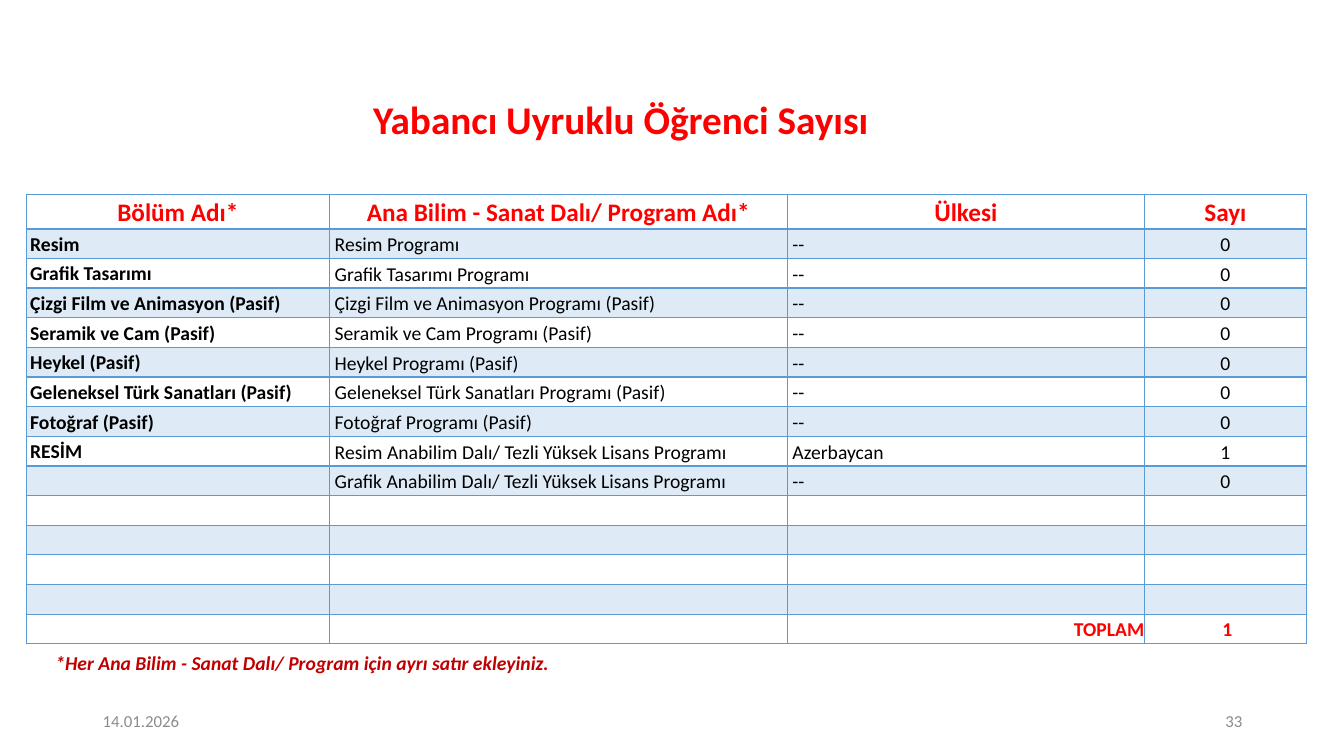
from dataclasses import dataclass

from lxml import etree
from pptx import Presentation
from pptx import util as u
from pptx.dml.color import RGBColor
from pptx.enum import text as t
from pptx.oxml import ns


@dataclass(frozen=True)
class Theme:
    """Colours, font and type sizes of the slide."""
    font: str = "Calibri"
    red: str = "FF0000"
    dark_red: str = "C00000"
    black: str = "000000"
    grey: str = "8C8C8C"
    blue: str = "5B9BD5"
    band_opacity: int = 20
    title: int = 28
    header: int = 18
    body: int = 14
    footer: int = 12


THEME = Theme()
LEFT, CENTER, RIGHT = t.PP_ALIGN.LEFT, t.PP_ALIGN.CENTER, t.PP_ALIGN.RIGHT

COLUMN_WIDTHS = (3.01, 4.54, 3.54, 1.61)
HEADER_HEIGHT = 0.34
HEADINGS = ("Bölüm Adı*", "Ana Bilim - Sanat Dalı/ Program Adı*", "Ülkesi", "Sayı")
STUDENTS = (
    ("Resim", "Resim Programı", "--", "0"),
    ("Grafik Tasarımı", "Grafik Tasarımı Programı", "--", "0"),
    ("Çizgi Film ve Animasyon (Pasif)", "Çizgi Film ve Animasyon Programı (Pasif)", "--", "0"),
    ("Seramik ve Cam (Pasif)", "Seramik ve Cam Programı (Pasif)", "--", "0"),
    ("Heykel (Pasif)", "Heykel Programı (Pasif)", "--", "0"),
    ("Geleneksel Türk Sanatları (Pasif)", "Geleneksel Türk Sanatları Programı (Pasif)", "--", "0"),
    ("Fotoğraf (Pasif)", "Fotoğraf Programı (Pasif)", "--", "0"),
    ("RESİM", "Resim Anabilim Dalı/ Tezli Yüksek Lisans Programı", "Azerbaycan", "1"),
    ("", "Grafik Anabilim Dalı/ Tezli Yüksek Lisans Programı", "--", "0"),
)
EMPTY_ROWS = 4
TOTAL = ("", "", "TOPLAM", "1")


def write_text(frame, words, size=THEME.body, color=THEME.black, bold=False,
               italic=False, align=LEFT, spacing=None):
    """Write one formatted paragraph into a text frame."""
    paragraph = frame.paragraphs[0]
    paragraph.alignment = align
    paragraph.line_spacing = spacing
    if not words:
        end = etree.SubElement(paragraph._p, ns.qn("a:endParaRPr"))
        end.set("sz", str(size * 100))
        return
    run = paragraph.add_run()
    run.text = words
    run.font.name = THEME.font
    run.font.size = u.Pt(size)
    run.font.bold = bold
    run.font.italic = italic
    run.font.color.rgb = RGBColor.from_string(color)


def add_text(slide, box, words, anchor=t.MSO_ANCHOR.MIDDLE, **style):
    """Place a wrapped text box in the given box."""
    frame = slide.shapes.add_textbox(*map(u.Inches, box)).text_frame
    frame.word_wrap = True
    frame.vertical_anchor = anchor
    write_text(frame, words, **style)


def set_borders(cell, **widths):
    """Draw the four cell borders with the given point widths."""
    properties = cell._tc.get_or_add_tcPr()
    for side in "LRTB":
        line = etree.SubElement(properties, ns.qn(f"a:ln{side}"))
        line.set("w", str(u.Pt(widths.get(side, 1))))
        fill = etree.SubElement(line, ns.qn("a:solidFill"))
        etree.SubElement(fill, ns.qn("a:srgbClr")).set("val", THEME.blue)


def set_band(cell, banded):
    """Give the cell a translucent band or no fill."""
    if not banded:
        cell.fill.background()
        return
    cell.fill.solid()
    cell.fill.fore_color.rgb = RGBColor.from_string(THEME.blue)
    color = cell._tc.tcPr.find(".//" + ns.qn("a:solidFill") + "[last()]/..")
    color = cell._tc.tcPr.find(ns.qn("a:solidFill")).find(ns.qn("a:srgbClr"))
    etree.SubElement(color, ns.qn("a:alpha")).set("val", str(THEME.band_opacity * 1000))


def cell_style(row, column, last_row):
    """Return the text format for a table position."""
    if row == 0:
        return dict(size=THEME.header, color=THEME.red, bold=True, align=CENTER)
    align = CENTER if column == 3 else LEFT
    if row == last_row:
        return dict(color=THEME.red, bold=True, align=RIGHT if column == 2 else align)
    return dict(bold=column == 0, align=align)


def set_margins(cell, row, column, last_row):
    """Set the cell insets for a table position."""
    tight = column == 0 or row == last_row
    indented = 0 < row and (column == 0 or column == 3)
    left = (0.04 if indented else 0) if tight else 0.05
    cell.margin_left = u.Inches(left)
    cell.margin_right = u.Inches(0 if tight else 0.05)
    cell.margin_top = u.Inches(0 if tight else 0.01)
    cell.margin_bottom = 0


def add_student_table(slide, box):
    """Build the table of foreign students in the given box."""
    blank = ("",) * len(HEADINGS)
    rows = (HEADINGS, *STUDENTS, *[blank] * EMPTY_ROWS, TOTAL)
    last_row = len(rows) - 1
    frame = slide.shapes.add_table(len(rows), len(HEADINGS), *map(u.Inches, box))
    table = frame.table
    table.first_row = table.horz_banding = False
    for column, width in zip(table.columns, COLUMN_WIDTHS):
        column.width = u.Inches(width)
    body_height = (box[3] - HEADER_HEIGHT) / last_row
    for r, values in enumerate(rows):
        table.rows[r].height = u.Inches(body_height if r else HEADER_HEIGHT)
        for c, words in enumerate(values):
            cell = table.cell(r, c)
            cell.vertical_anchor = t.MSO_ANCHOR.MIDDLE
            set_margins(cell, r, c, last_row)
            set_borders(cell, B=1 if r else 2, T=2 if r == 1 else 1)
            set_band(cell, r % 2 == 1 and r < last_row)
            write_text(cell.text_frame, words, spacing=1.07, **cell_style(r, c, last_row))


def add_footer(slide, box, date, number):
    """Place the date and the slide number at the ends of the box."""
    left, top, width, height = box
    part = 3
    style = dict(size=THEME.footer, color=THEME.grey)
    add_text(slide, (left, top, part, height), date, **style)
    add_text(slide, (left + width - part, top, part, height), number, align=RIGHT, **style)


def main():
    """Build and save the presentation."""
    presentation = Presentation()
    presentation.slide_width = u.Inches(13.33)
    presentation.slide_height = u.Inches(7.5)
    slide = presentation.slides.add_slide(presentation.slide_layouts[6])
    add_text(slide, (0.52, 0.93, 11.27, 0.56), "Yabancı Uyruklu Öğrenci Sayısı",
             size=THEME.title, color=THEME.red, bold=True, align=CENTER, spacing=0.9)
    add_footer(slide, (0.92, 6.95, 11.5, 0.4), "14.01.2026", "33")
    add_student_table(slide, (0.26, 1.93, 12.7, 4.46))
    add_text(slide, (0.45, 6.41, 6.37, 0.34),
             "*Her Ana Bilim - Sanat Dalı/ Program için ayrı satır ekleyiniz.",
             anchor=t.MSO_ANCHOR.TOP, color=THEME.dark_red, bold=True, italic=True)
    presentation.save("out.pptx")


if __name__ == "__main__":
    main()
